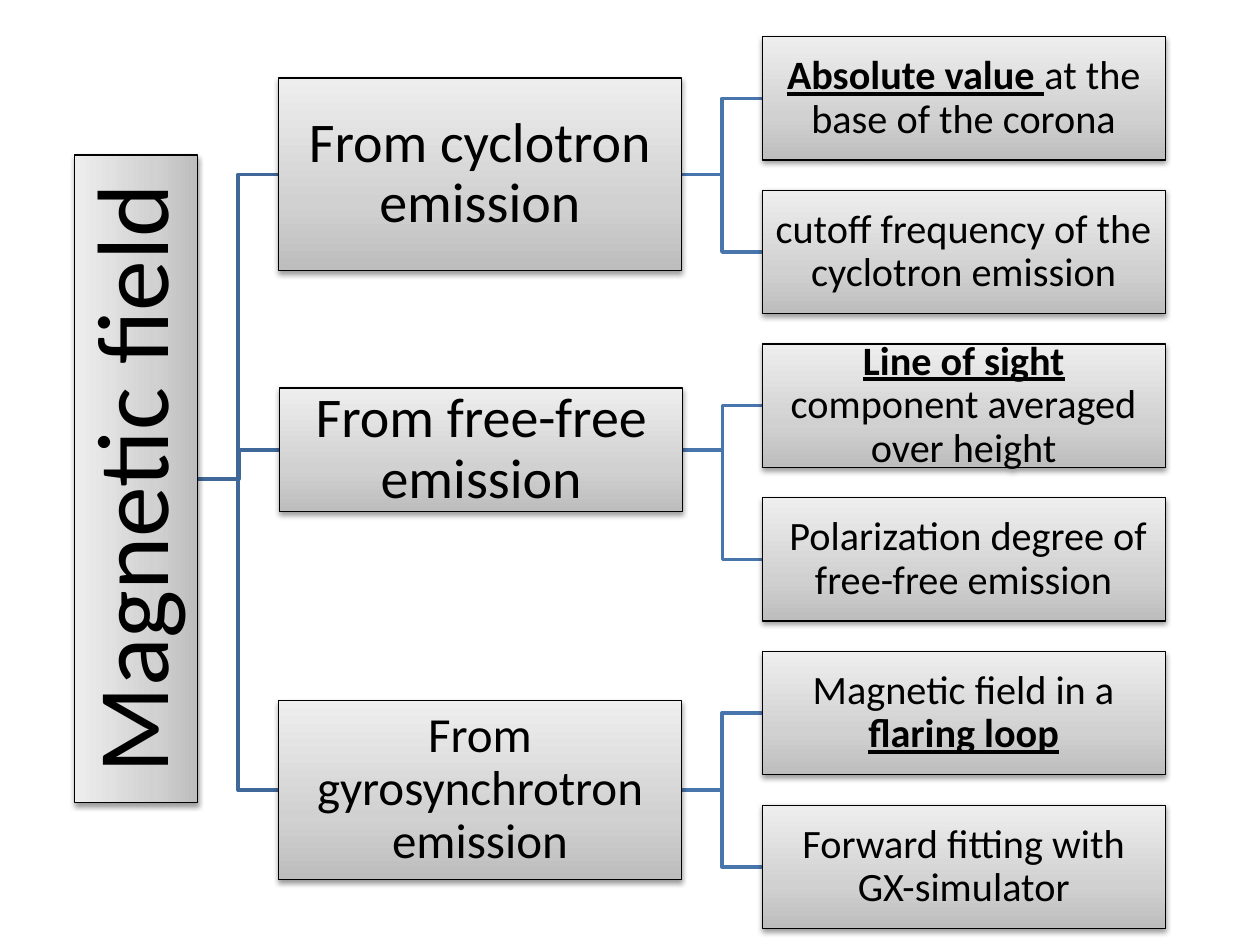
import lxml.etree
import pptx
import pptx.dml.color
import pptx.enum.shapes
import pptx.enum.text
import pptx.oxml
import pptx.oxml.ns
import pptx.util
from pptx.util import Inches

DRAWING_NS = pptx.oxml.ns.nsdecls("a")
SHADES = [(0, "BDBDBD"), (35, "D1D1D1"), (100, "EEEEEE")]
LEAF_LEFT, LEAF_TOP, LEAF_PITCH = 6.05, 0.29, 1.22
BOX_WIDTH, BOX_HEIGHT = 3.2, 0.98
ROOT_BOX = (0.59, 1.23, BOX_HEIGHT, 5.14)

# Each branch: text, font size, box, leaves; a leaf is a list of (text, emphasised).
BRANCHES = [
    ("From cyclotron emission", 32, (2.21, 0.62, BOX_WIDTH, 1.53), [
        [("Absolute value ", True), ("at the base of the corona", False)],
        [("cutoff frequency of the cyclotron emission", False)],
    ]),
    ("From free-free emission", 32, (2.22, 3.08, BOX_WIDTH, BOX_HEIGHT), [
        [("Line of sight ", True), ("component averaged over height", False)],
        [(" Polarization degree of free-free emission", False)],
    ]),
    ("From gyrosynchrotron emission", 28, (2.21, 5.56, BOX_WIDTH, 1.42), [
        [("Magnetic field in a ", False), ("flaring loop", True)],
        [("Forward fitting with\nGX-simulator", False)],
    ]),
]


def rgb(hex_color):
    return pptx.dml.color.RGBColor.from_string(hex_color)


def write_text(shape, pieces, size, margin=0.02, font="Calibri", color="000000"):
    """Fill the shape with one centred paragraph of (text, emphasised) pieces."""
    frame = shape.text_frame
    frame.word_wrap = True
    frame.vertical_anchor = pptx.enum.text.MSO_ANCHOR.MIDDLE
    frame.margin_left = frame.margin_right = Inches(margin)
    frame.margin_top = frame.margin_bottom = Inches(margin)
    paragraph = frame.paragraphs[0]
    paragraph.alignment = pptx.enum.text.PP_ALIGN.CENTER
    paragraph.line_spacing = 0.9
    for text, emphasised in pieces:
        for index, line in enumerate(text.split("\n")):
            if index:
                paragraph.add_line_break()
            run = paragraph.add_run()
            run.text = line
            run.font.name = font
            run.font.size = pptx.util.Pt(size)
            run.font.color.rgb = rgb(color)
            run.font.bold = run.font.underline = emphasised


def shade(shape):
    """Give the shape the three-stop grey gradient and a soft shadow below."""
    stops = "".join(
        f'<a:gs pos="{position * 1000}"><a:srgbClr val="{color}"/></a:gs>'
        for position, color in SHADES)
    shape.fill.gradient()
    properties = shape.fill._xPr
    gradient = pptx.oxml.parse_xml(
        f'<a:gradFill {DRAWING_NS} rotWithShape="1"><a:gsLst>{stops}</a:gsLst>'
        '<a:lin ang="16200000" scaled="0"/></a:gradFill>')
    properties.replace(properties.find(pptx.oxml.ns.qn("a:gradFill")), gradient)
    shape.shadow.inherit = False
    effects = properties.find(pptx.oxml.ns.qn("a:effectLst"))
    effects.append(pptx.oxml.parse_xml(
        f'<a:outerShdw {DRAWING_NS} blurRad="{pptx.util.Pt(3.1)}" '
        f'dist="{pptx.util.Pt(1.6)}" dir="5400000" rotWithShape="0">'
        '<a:srgbClr val="000000"><a:alpha val="38000"/></a:srgbClr></a:outerShdw>'))


def add_node(slide, box, pieces, size, upward=False, margin=0.02):
    """Draw a node in the box; an upward node is turned to read bottom to top."""
    left, top, width, height = box
    if upward:
        left, top = left + (width - height) / 2, top + (height - width) / 2
        width, height = height, width
    node = slide.shapes.add_shape(
        pptx.enum.shapes.MSO_SHAPE.RECTANGLE,
        Inches(left), Inches(top), Inches(width), Inches(height))
    node.rotation = 270 if upward else 0
    node.line.color.rgb = rgb("000000")
    node.line.width = pptx.util.Pt(0.75)
    shade(node)
    write_text(node, pieces, size, margin)


def add_elbow(slide, parent, child, color):
    """Join the parent's right side to the child's left side with a stepped line."""
    start_x, start_y = parent[0] + parent[2], parent[1] + parent[3] / 2
    end_x, end_y = child[0], child[1] + child[3] / 2
    middle_x = (start_x + end_x) / 2
    builder = slide.shapes.build_freeform(Inches(start_x), Inches(start_y))
    corners = [(middle_x, start_y), (middle_x, end_y), (end_x, end_y)]
    builder.add_line_segments(
        [(Inches(x), Inches(y)) for x, y in corners], close=False)
    elbow = builder.convert_to_shape()
    elbow.fill.background()
    elbow.line.color.rgb = rgb(color)
    elbow.line.width = pptx.util.Pt(2)
    elbow.shadow.inherit = False


def add_branch(slide, text, size, box, leaves, first_row):
    leaf_boxes = [
        (LEAF_LEFT, LEAF_TOP + (first_row + row) * LEAF_PITCH, BOX_WIDTH, BOX_HEIGHT)
        for row in range(len(leaves))]
    add_elbow(slide, ROOT_BOX, box, "3F6797")
    for leaf_box in leaf_boxes:
        add_elbow(slide, box, leaf_box, "4875AC")
    add_node(slide, box, [(text, False)], size)
    for leaf_box, pieces in zip(leaf_boxes, leaves):
        add_node(slide, leaf_box, pieces, 23)


def main():
    presentation = pptx.Presentation()
    presentation.slide_width, presentation.slide_height = Inches(10), Inches(7.5)
    slide = presentation.slides.add_slide(presentation.slide_layouts[6])
    first_row = 0
    for text, size, box, leaves in BRANCHES:
        add_branch(slide, text, size, box, leaves, first_row)
        first_row += len(leaves)
    add_node(slide, ROOT_BOX, [("Magnetic field", False)], 58, upward=True, margin=0.04)
    presentation.save("out.pptx")


if __name__ == "__main__":
    main()
